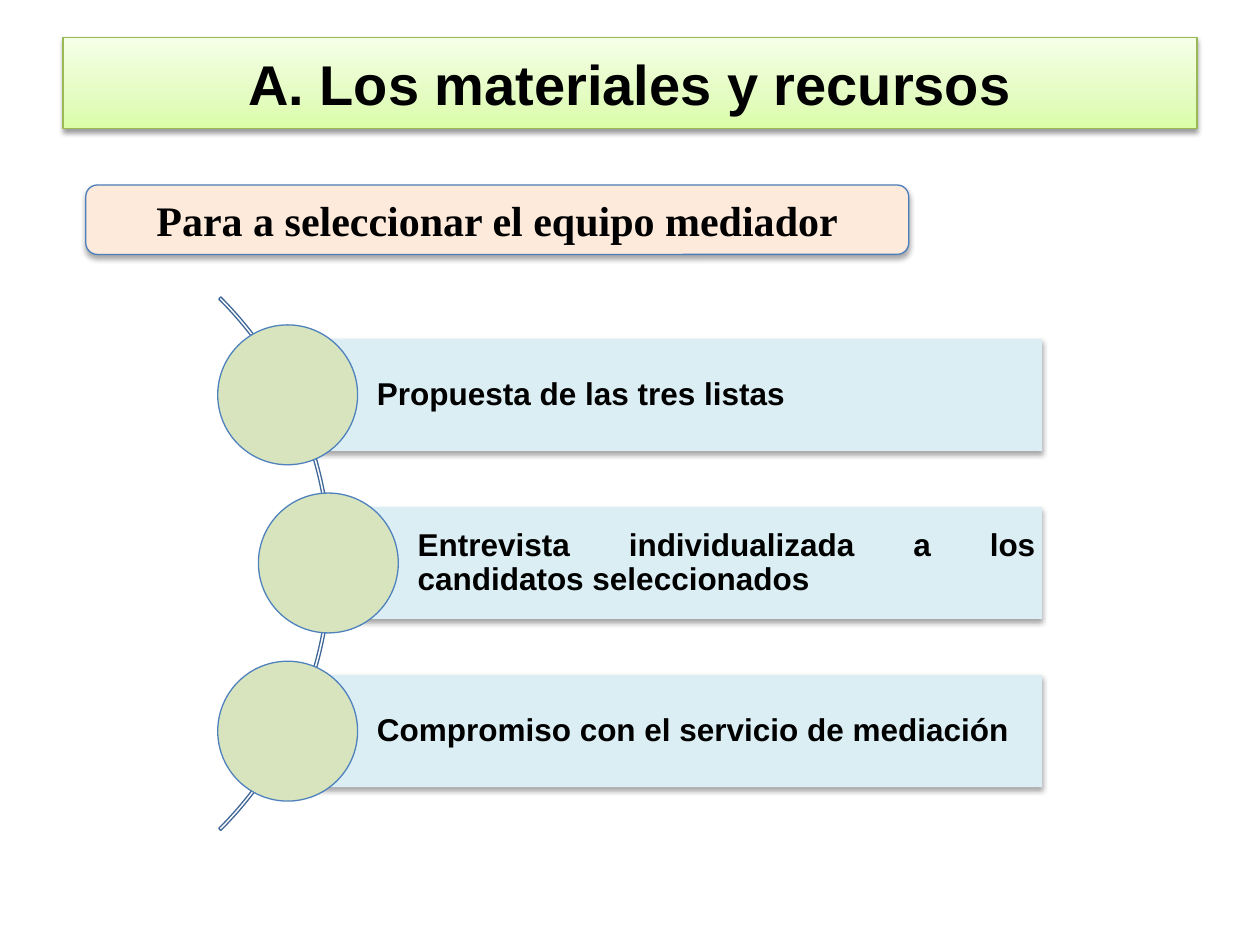
from copy import deepcopy

from lxml.etree import SubElement
from pptx import Presentation
from pptx.dml.color import RGBColor
from pptx.enum.shapes import MSO_SHAPE as Shape
from pptx.enum.text import MSO_ANCHOR as Anchor, PP_ALIGN as Align
from pptx.oxml.ns import qn
from pptx.util import Cm, Pt

# Content
TITLE = "A. Los materiales y recursos"
SUBTITLE = "Para a seleccionar el equipo mediador"
STEPS = [  # text, left edge of the bar in cm
    ("Propuesta de las tres listas", 5.8),
    ("Entrevista individualizada a los candidatos seleccionados", 6.62),
    ("Compromiso con el servicio de mediación", 5.8),
]
TITLE_STOPS = [(0, "DAFDA7"), (0.35, "E4FCC2"), (1, "F5FFE7")]

# Layout in cm
BAR_TOP, BAR_HEIGHT, BAR_RIGHT, PITCH = 6.83, 2.26, 21.01, 3.39
CIRCLE = 2.82
ARC_LEFT, ARC_TOP, ARC_SIZE = -8.53, 3.76, 15.21


def color(value):
    return RGBColor.from_string(value)


def add_shadow(shape, distance, opacity):
    shadow = SubElement(shape._element.spPr.find(qn("a:effectLst")), qn("a:outerShdw"),
                        blurRad=str(Pt(3.1)), dist=str(Pt(distance)),
                        dir="5400000", rotWithShape="0")
    black = SubElement(shadow, qn("a:srgbClr"), val="000000")
    SubElement(black, qn("a:alpha"), val=str(opacity * 1000))


def add_shape(kind, left, top, width, height, fill=None, line=None):
    shape = page.shapes.add_shape(kind, Cm(left), Cm(top), Cm(width), Cm(height))
    shape.shadow.inherit = False
    if fill:
        shape.fill.solid()
        shape.fill.fore_color.rgb = color(fill)
    else:
        shape.fill.background()
    if line:
        shape.line.color.rgb = color(line)
        shape.line.width = Pt(0.75)
    else:
        shape.line.fill.background()
    return shape


def write(shape, text, size, font="Arial", align=Align.CENTER):
    frame = shape.text_frame
    frame.text = text
    frame.word_wrap = True
    frame.vertical_anchor = Anchor.MIDDLE
    para = frame.paragraphs[0]
    para.alignment = align
    for span in para.runs:
        span.font.name, span.font.size, span.font.bold = font, Pt(size), True
        span.font.color.rgb = color("000000")


deck = Presentation()
deck.slide_width, deck.slide_height = Cm(25.4), Cm(19.05)
page = deck.slides.add_slide(deck.slide_layouts[6])

# Title band with a three-stop gradient
title = add_shape(Shape.RECTANGLE, 1.27, 0.76, 22.86, 1.83, line="98B955")
title.fill.gradient()
title.fill.gradient_angle = 90
first_stop = title.fill.gradient_stops[0]._gs
first_stop.addnext(deepcopy(first_stop))
for stop, (position, value) in zip(title.fill.gradient_stops, TITLE_STOPS):
    stop.position = position
    stop.color.rgb = color(value)
add_shadow(title, 1.6, 38)
write(title, TITLE, 32)

# Subtitle
subtitle = add_shape(Shape.ROUNDED_RECTANGLE, 1.73, 3.73, 16.59, 1.4, "FDEADA", "4B7EBC")
add_shadow(subtitle, 1.8, 35)
write(subtitle, SUBTITLE, 24, "Times New Roman")

# Arc behind the steps, from 315 to 45 degrees
arc = add_shape(Shape.BLOCK_ARC, ARC_LEFT, ARC_TOP, ARC_SIZE, ARC_SIZE, line="3F6797")
for index, value in enumerate((189, 27, 0.004)):
    arc.adjustments[index] = value

# Steps: a bar with a circle centred on its left edge
for row, (text, left) in enumerate(STEPS):
    top = BAR_TOP + row * PITCH
    bar = add_shape(Shape.RECTANGLE, left, top, BAR_RIGHT - left, BAR_HEIGHT, "DBEEF4")
    add_shadow(bar, 1.8, 35)
    write(bar, text, 18, align=Align.JUSTIFY)
    frame = bar.text_frame
    frame.margin_left = Cm(1.8)
    frame.margin_right = frame.margin_top = frame.margin_bottom = Cm(0.13)
    frame.paragraphs[0].line_spacing = 0.9
    add_shape(Shape.OVAL, left - CIRCLE / 2, top + (BAR_HEIGHT - CIRCLE) / 2,
              CIRCLE, CIRCLE, "D7E4BD", "4F81BD")

deck.save("out.pptx")
